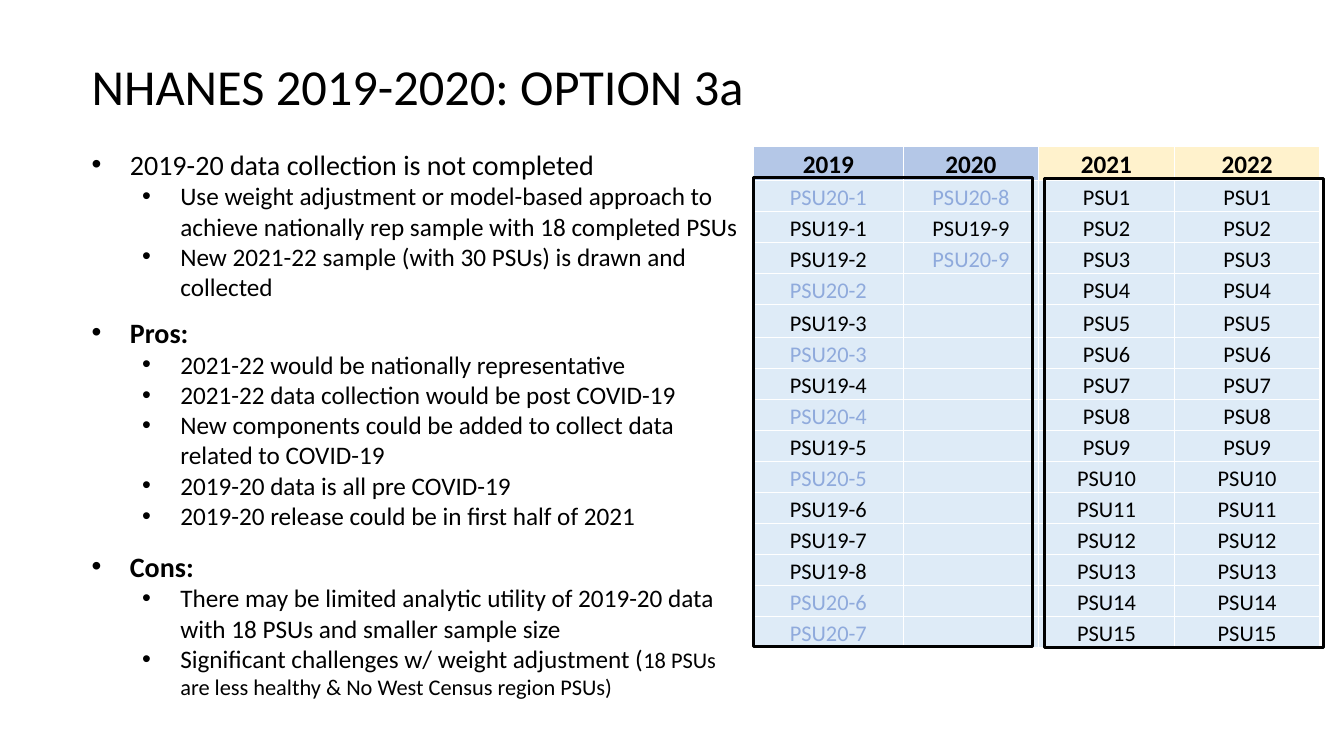
from dataclasses import dataclass
from itertools import zip_longest

from lxml.etree import SubElement
from pptx import Presentation
from pptx.dml.color import RGBColor as RGB
from pptx.enum.shapes import MSO_SHAPE as Shape
from pptx.enum.text import MSO_ANCHOR as Anchor, PP_ALIGN as Align
from pptx.oxml.ns import qn
from pptx.util import Inches, Pt


@dataclass(frozen=True)
class Theme:
    font: str = "Calibri"
    ink: str = "000000"
    muted: str = "8FAADC"
    grid: str = "FFFFFF"
    past: str = "B4C7E7"
    future: str = "FFF2CC"
    body: str = "DEEBF7"
    title_size: int = 36
    heading_size: int = 20
    text_size: int = 18
    small_size: int = 16


OPEN_POINTS = [
    "Use weight adjustment or model-based approach to achieve nationally rep sample with 18 completed PSUs",
    "New 2021-22 sample (with 30 PSUs) is drawn and collected",
]
PROS = [
    "2021-22 would be nationally representative",
    "2021-22 data collection would be post COVID-19",
    "New components could be added to collect data related to COVID-19",
    "2019-20 data is all pre COVID-19",
    "2019-20 release could be in first half of 2021",
]
CONS = [
    "There may be limited analytic utility of 2019-20 data with 18 PSUs and smaller sample size",
    ("Significant challenges w/ weight adjustment (",
     "18 PSUs are less healthy & No West Census region PSUs)"),
]
SECTIONS = [
    ("2019-20 data collection is not completed", False, 0, OPEN_POINTS),
    ("Pros:", True, 9.8, PROS),
    ("Cons:", True, 13.4, CONS),
]
PSU_2019 = ["20-1", "19-1", "19-2", "20-2", "19-3", "20-3", "19-4", "20-4",
            "19-5", "20-5", "19-6", "19-7", "19-8", "20-6", "20-7"]
PSU_2020 = ["20-8", "19-9", "20-9"]
PSU_NEW = [str(n) for n in range(1, 16)]


class Deck:
    def __init__(self, theme):
        self.theme = theme
        self.prs = Presentation()
        self.prs.slide_width, self.prs.slide_height = Inches(13.33), Inches(7.5)
        self.s = self.prs.slides.add_slide(self.prs.slide_layouts[6])

    def x(self, percent):
        return round(self.prs.slide_width * percent / 100)

    def y(self, percent):
        return round(self.prs.slide_height * percent / 100)

    def box(self, left, top, width, height):
        return self.x(left), self.y(top), self.x(width), self.y(height)

    def run(self, p, text, size, color=None, bold=False):
        r = p.add_run()
        r.text = text
        formats = {"name": self.theme.font, "size": Pt(size), "bold": bold}
        for name, value in formats.items():
            setattr(r.font, name, value)
        r.font.color.rgb = RGB.from_string(color or self.theme.ink)

    def text_frame(self, area, anchor):
        tf = self.s.shapes.add_textbox(*self.box(*area)).text_frame
        for name, value in {"word_wrap": True, "vertical_anchor": anchor}.items():
            setattr(tf, name, value)
        return tf

    def title(self, area, text):
        tf = self.text_frame(area, Anchor.MIDDLE)
        self.run(tf.paragraphs[0], text, self.theme.title_size)

    def bullet(self, p, level, before=0):
        formats = {"level": level, "space_before": Pt(before), "space_after": Pt(0)}
        for name, value in formats.items():
            setattr(p, name, value)
        pPr = p._p.get_or_add_pPr()
        pPr.set("marL", str(Inches(0.38 + 0.5 * level)))
        pPr.set("indent", str(Inches(-0.38)))
        SubElement(pPr, qn("a:buFont"), typeface="Arial")
        SubElement(pPr, qn("a:buChar"), char="•")

    def outline(self, area, sections):
        tf = self.text_frame(area, Anchor.TOP)
        p = tf.paragraphs[0]
        for i, (heading, bold, before, points) in enumerate(sections):
            p = tf.add_paragraph() if i else p
            self.bullet(p, 0, before)
            self.run(p, heading, self.theme.heading_size, bold=bold)
            for point in points:
                p = tf.add_paragraph()
                self.bullet(p, 1)
                parts = (point,) if isinstance(point, str) else point
                for part, size in zip(parts, (self.theme.text_size, self.theme.small_size)):
                    self.run(p, part, size)

    def cell(self, cell, text, size, fill, color, bold):
        formats = {"margin_left": Inches(0.01), "margin_right": Inches(0.01),
                   "margin_top": Inches(0.01), "margin_bottom": 0,
                   "vertical_anchor": Anchor.BOTTOM}
        for name, value in formats.items():
            setattr(cell, name, value)
        tcPr = cell._tc.get_or_add_tcPr()
        for side in "LRTB":
            ln = SubElement(tcPr, qn(f"a:ln{side}"), w=str(Pt(1)))
            SubElement(SubElement(ln, qn("a:solidFill")), qn("a:srgbClr"), val=self.theme.grid)
        cell.fill.solid()
        cell.fill.fore_color.rgb = RGB.from_string(fill)
        p = cell.text_frame.paragraphs[0]
        p.alignment = Align.CENTER
        if text:
            self.run(p, text, size, color, bold)
        else:
            p._p.get_or_add_endParaRPr().set("sz", str(size * 100))

    def table(self, left, top, widths, heights, header, rows):
        t = self.theme
        area = self.box(left, top, sum(widths), sum(heights))
        table = self.s.shapes.add_table(len(heights), len(widths), *area).table
        table.first_row = table.horz_banding = False
        for column, width in zip(table.columns, widths):
            column.width = self.x(width)
        for row, height in zip(table.rows, heights):
            row.height = self.y(height)
        for c, (year, fill) in enumerate(header):
            self.cell(table.cell(0, c), year, t.text_size, fill, t.ink, True)
        for r, row in enumerate(rows, 1):
            for c, psu in enumerate(row):
                color = t.muted if psu.startswith("20-") else t.ink
                text = f"PSU{psu}" if psu else ""
                self.cell(table.cell(r, c), text, t.small_size, t.body, color, False)

    def frame(self, *area):
        sp = self.s.shapes.add_shape(Shape.RECTANGLE, *self.box(*area))
        sp.shadow.inherit = False
        sp.fill.background()
        sp.line.color.rgb = RGB.from_string(self.theme.ink)
        sp.line.width = Pt(2.25)


def main():
    theme = Theme()
    deck = Deck(theme)
    header = [("2019", theme.past), ("2020", theme.past),
              ("2021", theme.future), ("2022", theme.future)]
    rows = zip_longest(PSU_2019, PSU_2020, PSU_NEW, PSU_NEW, fillvalue="")
    heights = [4.53] + [4.1] * 4 + [4.4] + [4.1] * 10
    deck.table(56.04, 19.33, [11.18, 10.05, 10.13, 10.8], heights, header, rows)
    for left, top in ((56.04, 23.47), (77.72, 23.6)):
        deck.frame(left, top, 20.78, 62)
    deck.title((6.08, 3.33, 87.92, 15.87), "NHANES 2019-2020: OPTION 3a")
    deck.outline((6.08, 18.8, 49.96, 87.33), SECTIONS)
    deck.prs.save("out.pptx")


if __name__ == "__main__":
    main()
